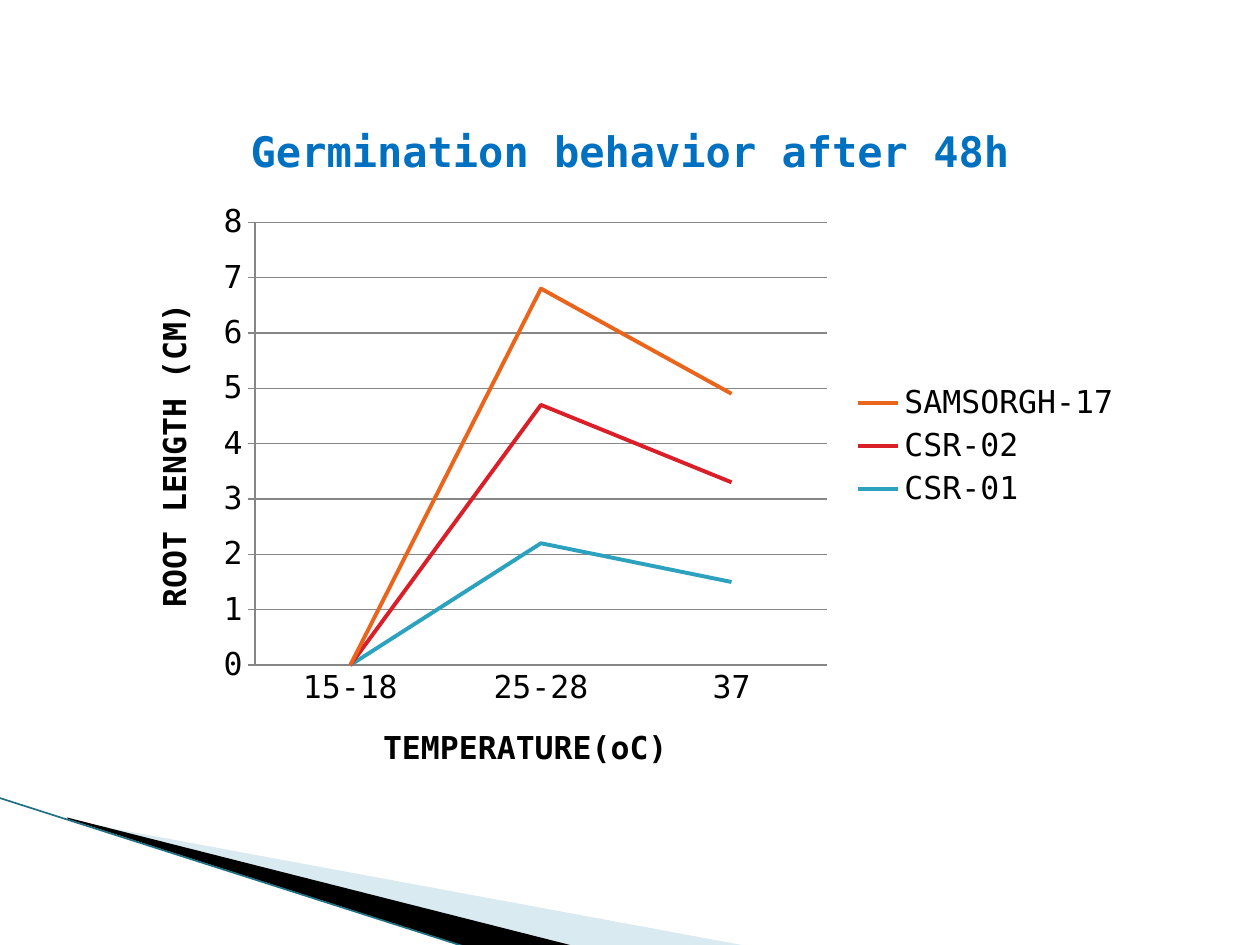
from dataclasses import dataclass

from lxml import etree
from pptx import Presentation
from pptx.chart.data import CategoryChartData
from pptx.dml.color import RGBColor
from pptx.enum.chart import XL_CHART_TYPE, XL_LEGEND_POSITION, XL_TICK_MARK
from pptx.enum.shapes import MSO_CONNECTOR
from pptx.oxml import parse_xml
from pptx.oxml.ns import nsdecls, qn
from pptx.util import Cm, Pt


@dataclass(frozen=True)
class Theme:
    font: str = "DejaVu Sans Mono"
    text: str = "000000"
    heading: str = "0070C0"
    grid: str = "868686"
    pale: str = "A0CBDC"
    edge: str = "1F7083"
    label_size: int = 18
    heading_size: int = 24


THEME = Theme()
HEADING = "Germination behavior after 48h"
TEMPERATURE = "TEMPERATURE(oC)"
ROOT_LENGTH = "ROOT LENGTH (CM)"
TEMPERATURES = ["15-18", "25-28", "37"]
VARIETIES = [
    ("CSR-01", (0, 2.2, 1.5), "2DA2BF"),
    ("CSR-02", (0, 2.5, 1.8), "DA1F28"),
    ("SAMSORGH-17", (0, 2.1, 1.6), "EB641B"),
]
WEDGES = [
    ((1.98, 13.89, 10.57, 4.01),
     [(1.4, 16.54), (15.11, 19.08), (11.58, 19.08), (1.4, 16.51)], THEME.pale, 40),
    ((-0.15, 16.08, 10.57, 2.34),
     [(1.35, 16.48), (11.61, 19.08), (9.45, 19.1), (1.37, 16.51)], THEME.text, 100),
]
EDGE = [(-0.03, 16.08), (9.42, 19.1)]
CHART_FRAME = (2.54, 1.91, 20.32, 14.17)
PLOT_FRAME = (5.14, 4.48, 11.53, 8.93)


def rgb(code):
    return RGBColor.from_string(code)


def style_font(font, size, color, bold):
    font.name, font.size, font.bold = THEME.font, Pt(size), bold
    font.color.rgb = rgb(color)


def set_frame(wedge, frame):
    left, top, width, height = [Cm(value) for value in frame]
    shift_x, shift_y = wedge.left - left, wedge.top - top
    outline = wedge._element.spPr.find(".//" + qn("a:path"))
    outline.set("w", str(width))
    outline.set("h", str(height))
    for corner in outline.iter(qn("a:pt")):
        corner.set("x", str(int(corner.get("x")) + shift_x))
        corner.set("y", str(int(corner.get("y")) + shift_y))
    wedge.left, wedge.top, wedge.width, wedge.height = left, top, width, height


def add_wedge(slide, frame, corners, color, opacity):
    points = [(Cm(x), Cm(y)) for x, y in corners]
    builder = slide.shapes.build_freeform(*points[0], scale=1.0)
    builder.add_line_segments(points[1:], close=True)
    wedge = builder.convert_to_shape()
    set_frame(wedge, frame)
    wedge.shadow.inherit = False
    wedge.fill.solid()
    wedge.fill.fore_color.rgb = rgb(color)
    wedge.line.fill.background()
    if opacity < 100:
        tint = wedge.fill._xPr.find(qn("a:solidFill"))[0]
        etree.SubElement(tint, qn("a:alpha")).set("val", str(opacity * 1000))


def add_edge(slide):
    ends = [Cm(value) for point in EDGE for value in point]
    edge = slide.shapes.add_connector(MSO_CONNECTOR.STRAIGHT, *ends)
    edge.line.color.rgb = rgb(THEME.edge)
    edge.line.width = Pt(0.95)
    etree.SubElement(edge._element.spPr, qn("a:effectLst"))


def write_title(owner, words, size, color):
    run = owner.text_frame.paragraphs[0].add_run()
    run.text = words
    style_font(run.font, size, color, True)


def place_plot(chart):
    left, top, width, height = CHART_FRAME
    x, y, w, h = PLOT_FRAME
    shares = {"x": (x - left) / width, "y": (y - top) / height,
              "w": w / width, "h": h / height}
    plot_area = chart._chartSpace.chart.plotArea
    for old in plot_area.findall(qn("c:layout")):
        plot_area.remove(old)
    modes = '<c:layoutTarget val="inner"/><c:xMode val="edge"/><c:yMode val="edge"/>'
    sizes = "".join(f'<c:{key} val="{value:.4f}"/>' for key, value in shares.items())
    plot_area.insert(0, parse_xml(
        f'<c:layout {nsdecls("c")}><c:manualLayout>{modes}{sizes}</c:manualLayout></c:layout>'))


def add_germination_chart(slide):
    data = CategoryChartData()
    data.categories = TEMPERATURES
    for name, lengths, _ in VARIETIES:
        data.add_series(name, lengths)
    frame = [Cm(value) for value in CHART_FRAME]
    chart = slide.shapes.add_chart(XL_CHART_TYPE.LINE_STACKED, *frame, data).chart
    style_font(chart.font, THEME.label_size, THEME.text, False)
    chart.has_title = True
    write_title(chart.chart_title, HEADING, THEME.heading_size, THEME.heading)
    chart.has_legend = True
    chart.legend.position = XL_LEGEND_POSITION.RIGHT
    chart.legend.include_in_layout = False

    axes = [
        (chart.category_axis, TEMPERATURE, XL_TICK_MARK.NONE),
        (chart.value_axis, ROOT_LENGTH, XL_TICK_MARK.CROSS),
    ]
    for axis, words, tick in axes:
        write_title(axis.axis_title, words, THEME.label_size, THEME.text)
        axis.major_tick_mark = tick
        axis.minor_tick_mark = XL_TICK_MARK.NONE
        axis.format.line.color.rgb = rgb(THEME.grid)
        axis.format.line.width = Pt(0.75)
    scale = chart.value_axis
    scale.minimum_scale, scale.maximum_scale, scale.major_unit = 0, 8, 1
    scale.has_major_gridlines = True
    scale.major_gridlines.format.line.color.rgb = rgb(THEME.grid)
    scale.major_gridlines.format.line.width = Pt(0.75)

    plot = chart.plots[0]
    plot.vary_by_categories = False
    for series, (_, _, color) in zip(plot.series, VARIETIES):
        series.smooth = False
        series.format.line.color.rgb = rgb(color)
        series.format.line.width = Pt(2.25)
    place_plot(chart)


def main():
    """Build the germination slide."""
    deck = Presentation()
    deck.slide_width, deck.slide_height = Cm(25.4), Cm(19.05)
    slide = deck.slides.add_slide(deck.slide_layouts[6])
    for wedge in WEDGES:
        add_wedge(slide, *wedge)
    add_edge(slide)
    add_germination_chart(slide)
    deck.save("out.pptx")


if __name__ == "__main__":
    main()
